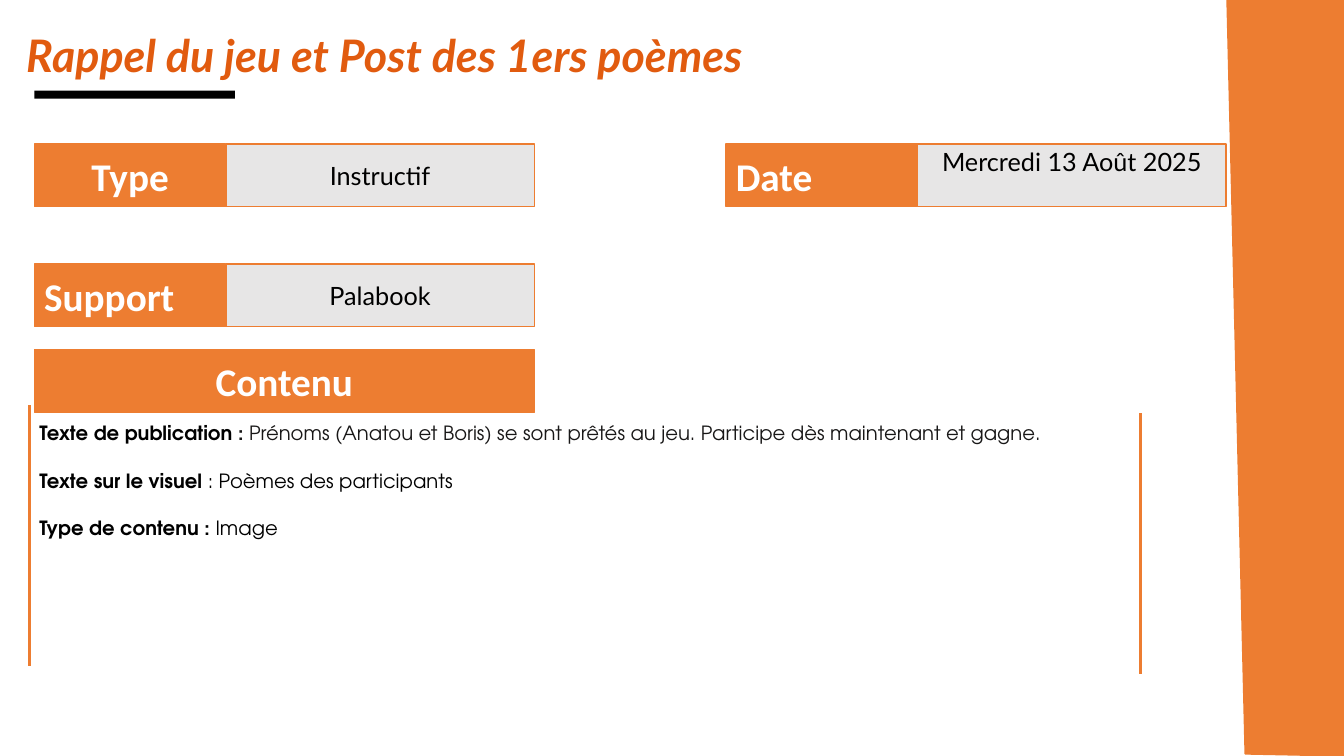
from pptx import Presentation, util as u
from pptx.dml.color import RGBColor
from pptx.enum import shapes, text
from pptx.oxml import ns

ORANGE = RGBColor(0xED, 0x7D, 0x31)
TITLE_ORANGE = RGBColor(0xE1, 0x5B, 0x0F)
GREY = RGBColor(0xE7, 0xE6, 0xE6)
INK = RGBColor(0x18, 0x17, 0x17)
BLACK = RGBColor(0, 0, 0)
WHITE = RGBColor(255, 255, 255)

LABEL_FONT = {"name": "Calibri", "size": u.Pt(28), "bold": True}
VALUE_FONT = {"name": "Lato", "size": u.Pt(18), "bold": False}
TITLE_FONT = {"name": "Lato", "size": u.Pt(32), "bold": True, "italic": True}
BODY_FONT = {"name": "TeX Gyre Adventor", "size": u.Pt(14)}
LEFT, CENTER = text.PP_ALIGN.LEFT, text.PP_ALIGN.CENTER
MIDDLE, TOP = text.MSO_ANCHOR.MIDDLE, text.MSO_ANCHOR.TOP

LEFT_COLUMN, RIGHT_COLUMN = 0.34, 7.2
LABEL_WIDTH, VALUE_WIDTH, BOX_HEIGHT = 1.9, 3.06, 0.62
ROWS = [1.43, 2.62, 3.47]


def write(paragraph, words, color, values):
    run = paragraph.add_run()
    run.text = words
    run.font.color.rgb = color
    for name, value in values.items():
        setattr(run.font, name, value)


def add_box(left, top, width, height, fill):
    shape = slide.shapes.add_shape(
        shapes.MSO_SHAPE.RECTANGLE, *map(u.Inches, (left, top, width, height)))
    shape.shadow.inherit = False
    shape.fill.solid()
    shape.fill.fore_color.rgb = fill
    shape.line.color.rgb = ORANGE
    shape.line.width = u.Pt(1)
    return shape


presentation = Presentation()
presentation.slide_width, presentation.slide_height = u.Inches(13.33), u.Inches(7.5)
slide = presentation.slides.add_slide(presentation.slide_layouts[1])

builder = slide.shapes.build_freeform(u.Inches(12.17), 0, scale=1.0)
builder.add_line_segments(
    [(u.Inches(x), u.Inches(y)) for x, y in [(13.33, 0), (13.33, 7.5), (12.35, 7.48)]],
    close=True)
side_band = builder.convert_to_shape()
side_band.shadow.inherit = False
side_band.fill.solid()
side_band.fill.fore_color.rgb = ORANGE
side_band.line.color.rgb = ORANGE
side_band.line.width = u.Pt(1)

underline = add_box(LEFT_COLUMN, 0.9, 1.99, 0.08, BLACK)
underline.line.fill.background()

for x, top in [(0.29, 4.02), (11.31, 4.1)]:
    rule = slide.shapes.add_connector(
        shapes.MSO_CONNECTOR.STRAIGHT, *map(u.Inches, (x, top, x, top + 2.59)))
    rule.line.color.rgb = ORANGE
    rule.line.width = u.Pt(2.25)
    rule._element.spPr.append(rule._element.makeelement(ns.qn("a:effectLst")))

fields = [
    (LEFT_COLUMN, ROWS[0], "Type", CENTER, "Instructif", MIDDLE),
    (RIGHT_COLUMN, ROWS[0], "Date", LEFT, "Mercredi 13 Août 2025", TOP),
    (LEFT_COLUMN, ROWS[1], "Support", LEFT, "Palabook", MIDDLE),
]
boxes = [(LEFT_COLUMN, ROWS[2], LABEL_WIDTH + VALUE_WIDTH, "Contenu", CENTER, MIDDLE,
          ORANGE, WHITE, LABEL_FONT)]
for left, top, label, alignment, value, anchor in fields:
    boxes.append((left, top, LABEL_WIDTH, label, alignment, MIDDLE,
                  ORANGE, WHITE, LABEL_FONT))
    boxes.append((left + LABEL_WIDTH, top, VALUE_WIDTH, value, CENTER, anchor,
                  GREY, BLACK, VALUE_FONT))

for left, top, width, words, alignment, anchor, fill, color, font in boxes:
    frame = add_box(left, top, width, BOX_HEIGHT, fill).text_frame
    frame.word_wrap = True
    frame.vertical_anchor = anchor
    if anchor == TOP:
        frame.margin_top = u.Inches(0.02)
    frame.paragraphs[0].alignment = alignment
    write(frame.paragraphs[0], words, color, font)

title, body = slide.placeholders
for placeholder, bounds in [(title, (0.16, 0.22, 11.03, 0.52)),
                            (body, (0.29, 4.13, 10.65, 1.51))]:
    for name, value in zip(("left", "top", "width", "height"), bounds):
        setattr(placeholder, name, u.Inches(value))
    placeholder.text_frame.word_wrap = True
    placeholder.text_frame.auto_size = text.MSO_AUTO_SIZE.NONE
    placeholder.text_frame.vertical_anchor = TOP

heading = title.text_frame.paragraphs[0]
heading.alignment = text.PP_ALIGN.JUSTIFY
write(heading, "Rappel du jeu et Post des 1ers poèmes", TITLE_ORANGE, TITLE_FONT)

details = [
    [("Texte de publication ", BLACK, True), (": ", INK, True),
     ("Prénoms (Anatou et Boris) se sont prêtés au jeu. "
      "Participe dès maintenant et gagne.", INK, False)],
    [("Texte sur le visuel ", BLACK, True), (": Poèmes des participants", BLACK, False)],
    [("Type de contenu : ", BLACK, True), ("Image", BLACK, False)],
]
for index, runs in enumerate(details):
    paragraph = body.text_frame.add_paragraph() if index else body.text_frame.paragraphs[0]
    paragraph.space_before, paragraph.space_after = u.Pt(0), u.Pt(17)
    properties = paragraph._p.get_or_add_pPr()
    properties.set("marL", "0")
    properties.set("indent", "0")
    properties.append(properties.makeelement(ns.qn("a:buNone")))
    for words, color, bold in runs:
        write(paragraph, words, color, BODY_FONT | {"bold": bold})

presentation.save("out.pptx")
